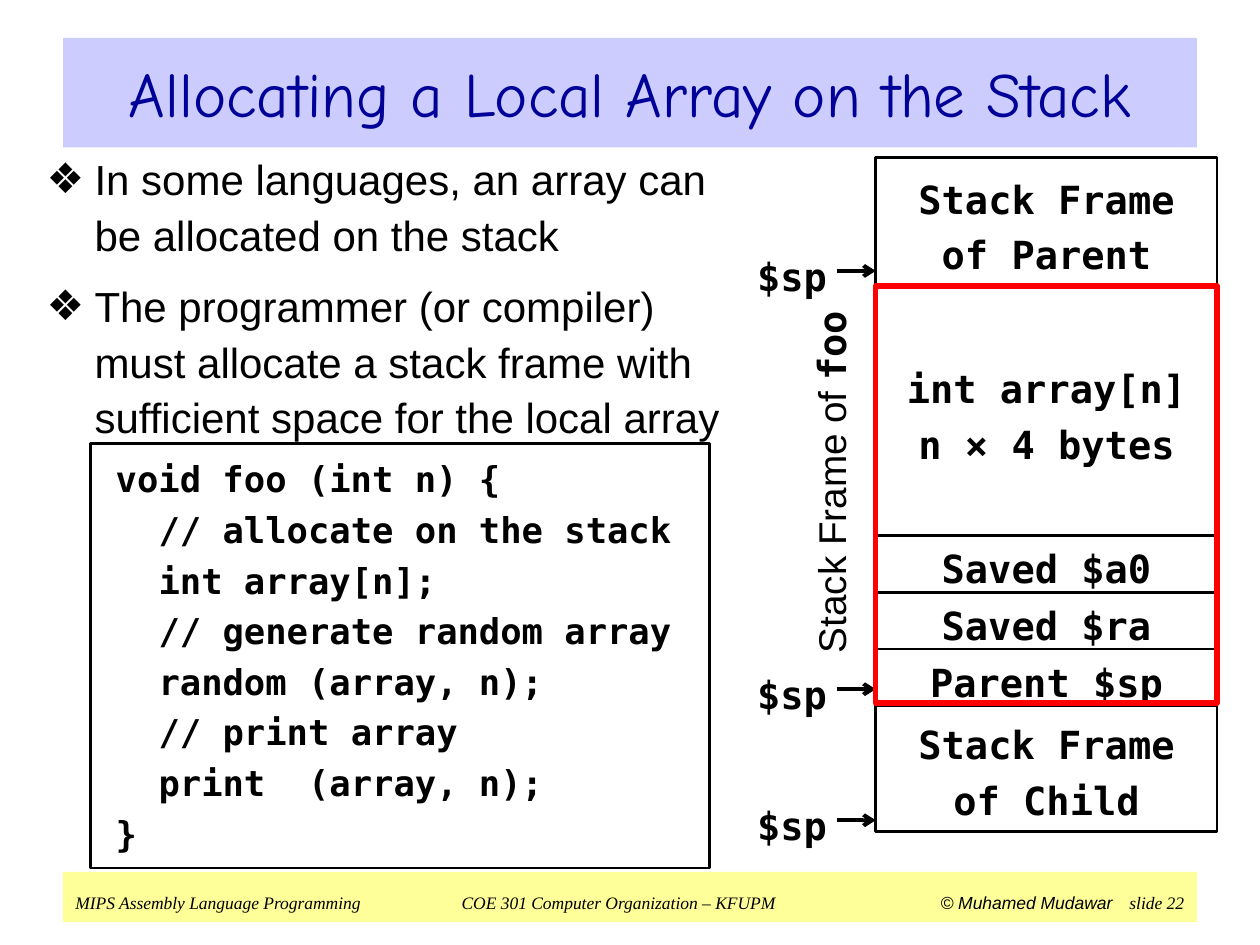
from lxml.etree import SubElement as Sub
from pptx import Presentation
from pptx.dml.color import RGBColor
from pptx.enum.shapes import MSO_CONNECTOR as Conn, MSO_SHAPE as Kind
from pptx.enum.text import MSO_ANCHOR as Anchor, MSO_AUTO_SIZE as Auto, PP_ALIGN as Align
from pptx.oxml.ns import qn
from pptx.util import Inches, Pt

BLACK = RGBColor(0x00, 0x00, 0x00)
NAVY = RGBColor(0x00, 0x00, 0x99)
LILAC = RGBColor(0xCC, 0xCC, 0xFF)
YELLOW = RGBColor(0xFF, 0xFF, 0x99)
RED = RGBColor(0xFF, 0x00, 0x00)

MONO = {"name": "DejaVu Sans Mono", "size": Pt(22.1), "bold": True}
CODE = {**MONO, "size": Pt(20.3)}
SANS = {"name": "Arial", "size": Pt(22.1)}
BODY = {"name": "Arial", "size": Pt(24)}
HEAD = {"name": "Comic Neue", "size": Pt(36), "color": NAVY}
NOTE = {"name": "Times New Roman", "size": Pt(10), "italic": True}
NAME = {**NOTE, "name": "Arial"}
MID = {"alignment": Align.CENTER, "line_spacing": 1.2}
LIST = {"line_spacing": 1.1, "space_before": Pt(9.2)}

LEFT, WIDE = 6.95, 2.71
STEP = 0.34

POINTS = [
    "In some languages, an array can be allocated on the stack",
    "The programmer (or compiler) must allocate a stack frame with "
    "sufficient space for the local array",
]
LINES = [
    (0, "void foo (int n) {"),
    (1, "// allocate on the stack"),
    (1, "int array[n];"),
    (1, "// generate random array"),
    (1, "random (array, n);"),
    (1, "// print array"),
    (1, "print  (array, n);"),
    (0, "}"),
]
CELLS = [
    (1.25, 1.02, ["Stack Frame", "of Parent"]),
    (2.28, 1.97, ["int array[n]", "n × 4 bytes"]),
    (4.25, 0.45, ["Saved $a0"]),
    (4.7, 0.45, ["Saved $ra"]),
    (5.15, 0.45, ["Parent $sp"]),
    (5.58, 1.02, ["Stack Frame", "of Child"]),
]
MARKS = [2.15, 5.47, 6.51]


def apply(item, form):
    """Set attributes of an item from a dict of format values."""
    for key, val in form.items():
        setattr(item, key, val)


def set_frame(frame, wrap=True, pad=(0, 0), anchor=Anchor.MIDDLE):
    """Set wrapping, anchor and the side and end margins of a text frame."""
    side, end = map(Inches, pad)
    apply(frame, {
        "auto_size": Auto.NONE, "word_wrap": wrap, "vertical_anchor": anchor,
        "margin_left": side, "margin_right": side,
        "margin_top": end, "margin_bottom": end,
    })


def add_run(para, text, form):
    """Add a run of text with a font format."""
    run = para.add_run()
    run.text = text
    font = run.font
    font.color.rgb = form.get("color", BLACK)
    apply(font, {key: val for key, val in form.items() if key != "color"})


def add_paras(frame, paras, form):
    """Fill a frame with paragraphs, each a list of text and font pairs."""
    for num, runs in enumerate(paras):
        para = frame.add_paragraph() if num else frame.paragraphs[0]
        apply(para, form)
        for text, font in runs:
            add_run(para, text, font)


def indent(para, left, hang=0):
    """Set the left margin and first-line indent of a paragraph."""
    props = para._p.get_or_add_pPr()
    props.set("marL", str(Inches(left)))
    props.set("indent", str(Inches(hang)))
    return props


def place(shape, box):
    """Move and size a shape in inches."""
    apply(shape, dict(zip(("left", "top", "width", "height"), map(Inches, box))))


def paint(shape, color):
    """Fill a shape with a solid colour."""
    shape.fill.solid()
    shape.fill.fore_color.rgb = color


def add_rect(slide, box, line=None, width=1.5):
    """Add a rectangle without fill, with an optional outline."""
    rect = slide.shapes.add_shape(Kind.RECTANGLE, *map(Inches, box))
    rect.shadow.inherit = False
    rect.fill.background()
    if line is None:
        rect.line.fill.background()
    else:
        rect.line.color.rgb = line
        rect.line.width = Pt(width)
    return rect


def add_label(slide, box, runs):
    """Add a centred one-line text box."""
    label = slide.shapes.add_textbox(*map(Inches, box))
    set_frame(label.text_frame, wrap=False)
    add_paras(label.text_frame, [runs], MID)
    return label


def add_arrow(slide, y):
    """Add an arrow that points to the stack at a height."""
    ends = map(Inches, (6.64, y, LEFT, y))
    arrow = slide.shapes.add_connector(Conn.STRAIGHT, *ends)
    arrow.line.color.rgb = BLACK
    arrow.line.width = Pt(2.25)
    Sub(arrow.line._get_or_add_ln(), qn("a:tailEnd"), type="arrow")
    Sub(arrow._element.spPr, qn("a:effectLst"))


def add_title(slide):
    """Fill the title placeholder."""
    title = slide.shapes.title
    place(title, (0.5, 0.3, 9, 0.87))
    paint(title, LILAC)
    set_frame(title.text_frame, pad=(0.1, 0.05))
    text = "Allocating a Local Array on the Stack"
    add_paras(title.text_frame, [[(text, HEAD)]], {"alignment": Align.CENTER})


def add_list(slide):
    """Fill the body placeholder with the bullet list."""
    body = slide.placeholders[1]
    place(body, (0.27, 1.13, 5.61, 2.33))
    frame = body.text_frame
    set_frame(frame, pad=(0.1, 0.05), anchor=Anchor.TOP)
    add_paras(frame, [[(text, BODY)] for text in POINTS], LIST)
    for para in frame.paragraphs:
        Sub(indent(para, 0.38, -0.38), qn("a:buChar"), char="❖")


def add_code(slide):
    """Add the framed code listing."""
    frame = add_rect(slide, (0.72, 3.52, 4.91, 3.37), BLACK).text_frame
    set_frame(frame, pad=(0.1, 0.07))
    form = {"alignment": Align.LEFT, "space_before": Pt(4.6)}
    add_paras(frame, [[(text, CODE)] for _, text in LINES], form)
    for para, (depth, _) in zip(frame.paragraphs, LINES):
        indent(para, 0.1 + depth * STEP)


def add_stack(slide):
    """Add the stack cells, pointers and the marked frame."""
    for top, tall, texts in CELLS:
        frame = add_rect(slide, (LEFT, top, WIDE, tall), BLACK).text_frame
        set_frame(frame, wrap=False)
        add_paras(frame, [[(text, MONO)] for text in texts], MID)
    for y in MARKS:
        add_arrow(slide, y)
        add_label(slide, (5.94, y - 0.26, 0.69, 0.52), [("$sp", MONO)])
    add_rect(slide, (LEFT, 2.27, WIDE, 3.31), RED, 3)
    runs = [("Stack Frame of ", SANS), ("foo", MONO)]
    add_label(slide, (5, 3.43, 3.11, 0.79), runs).rotation = 270


def add_footer(slide):
    """Add the footer band with tabbed texts."""
    band = add_rect(slide, (0.5, 6.92, 9, 0.4))
    paint(band, YELLOW)
    frame = band.text_frame
    set_frame(frame, pad=(0.1, 0.05))
    frame.margin_top = Inches(0.14)
    runs = [
        ("MIPS Assembly Language Programming\t", NOTE),
        ("COE 301 Computer Organization – KFUPM\t", NOTE),
        ("© Muhamed Mudawar\t", NAME),
        ("slide 22", NOTE),
    ]
    add_paras(frame, [runs], {"alignment": Align.LEFT})
    tabs = Sub(frame.paragraphs[0]._p.get_or_add_pPr(), qn("a:tabLst"))
    for pos, side in ((4.31, "ctr"), (8.23, "r"), (8.8, "r")):
        Sub(tabs, qn("a:tab"), pos=str(Inches(pos)), algn=side)


def main():
    """Build and save the slide."""
    deck = Presentation()
    deck.slide_width, deck.slide_height = Inches(10), Inches(7.5)
    slide = deck.slides.add_slide(deck.slide_layouts[1])
    for add in (add_title, add_list, add_code, add_stack, add_footer):
        add(slide)
    deck.save("out.pptx")


if __name__ == "__main__":
    main()
